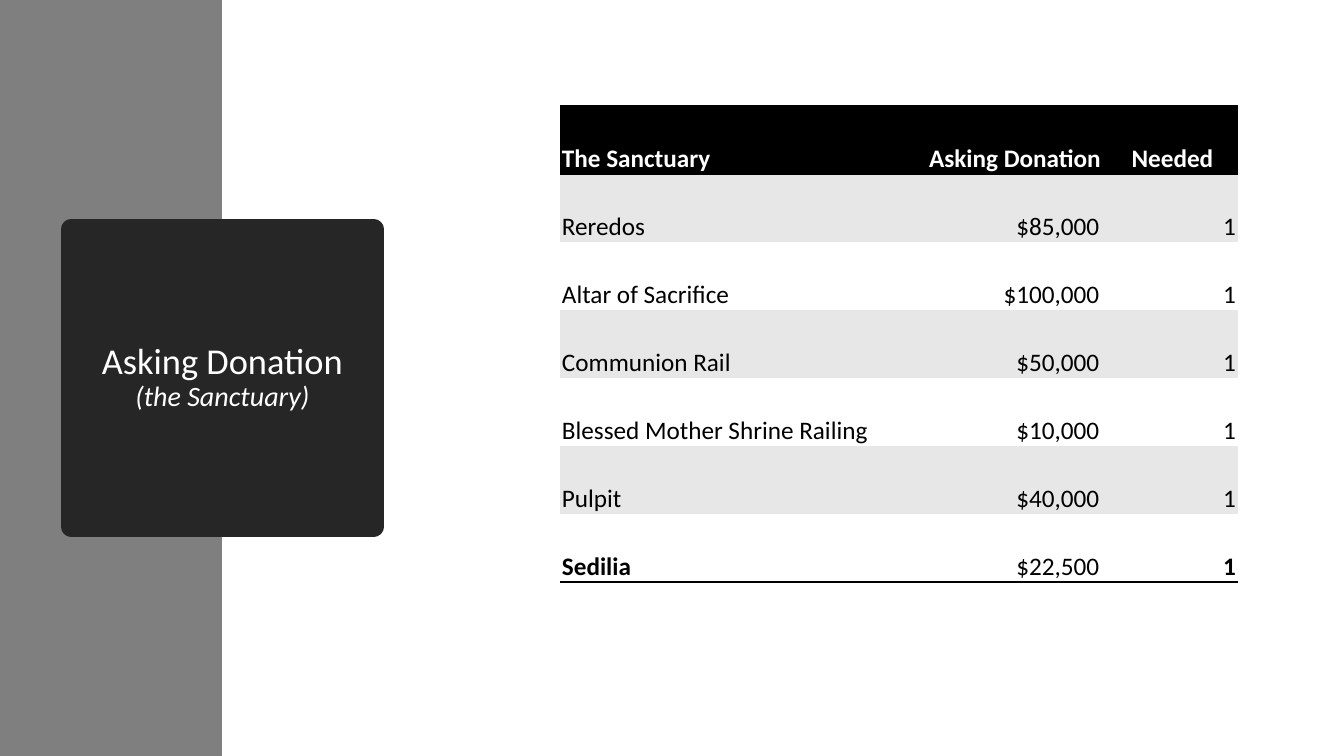
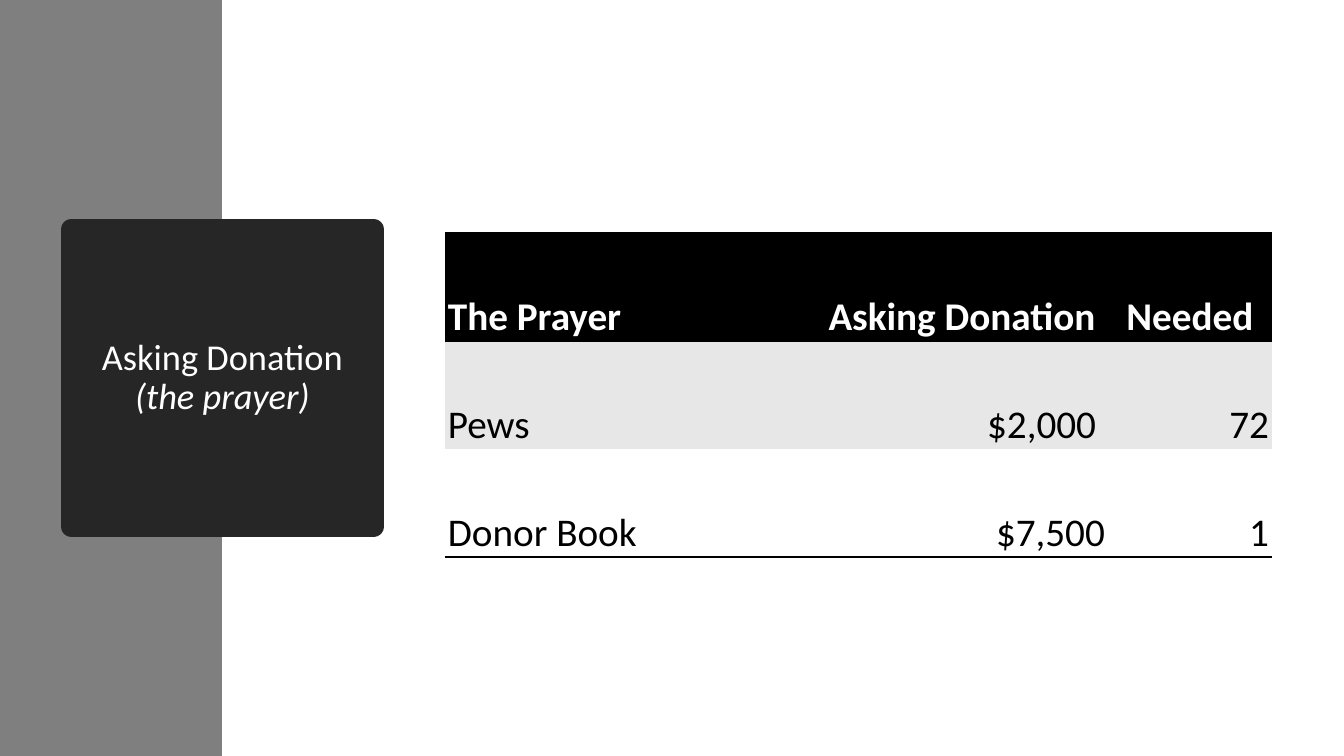
from lxml import etree
from pptx import Presentation
from pptx.dml.color import RGBColor
from pptx.enum.shapes import MSO_SHAPE
from pptx.enum.text import MSO_ANCHOR, MSO_AUTO_SIZE, PP_ALIGN
from pptx.oxml.ns import qn
from pptx.util import Emu, Pt

RECTANGLE = MSO_SHAPE.RECTANGLE
MIDDLE, BOTTOM = MSO_ANCHOR.MIDDLE, MSO_ANCHOR.BOTTOM
LEFT, CENTER, RIGHT = PP_ALIGN.LEFT, PP_ALIGN.CENTER, PP_ALIGN.RIGHT
NO_AUTOFIT = MSO_AUTO_SIZE.NONE

PX_PER_INCH = 100.8
SLIDE_WIDTH, SLIDE_HEIGHT = 1344, 756
FONT = "Calibri"
BLACK, WHITE = "000000", "FFFFFF"
BAND_GRAY, TITLE_DARK, ROW_GRAY = "7F7F7F", "262626", "E7E7E7"
TITLE_SIZE = 26
PLAIN_TABLE_STYLE = "{2D5ABB26-0587-4C30-8999-92F81FD0307C}"

SANCTUARY_ROWS = [
    ("The Sanctuary", "Asking Donation", "Needed"),
    ("Reredos", "$85,000 ", "1"),
    ("Altar of Sacrifice", "$100,000 ", "1"),
    ("Communion Rail", "$50,000 ", "1"),
    ("Blessed Mother Shrine Railing", "$10,000 ", "1"),
    ("Pulpit", "$40,000 ", "1"),
    ("Sedilia", "$22,500 ", "1"),
]
PRAYER_ROWS = [
    ("The Prayer", "Asking Donation", "Needed"),
    ("Pews", "$2,000 ", "72"),
    ("Donor Book", "$7,500", "1"),
]


def px(length):
    """Turn pixels into EMU."""
    return Emu(round(length * 914400 / PX_PER_INCH))


def color(value):
    """Turn a hex string into a colour."""
    return RGBColor.from_string(value)


def paint(fill, value):
    """Make a fill solid."""
    fill.solid()
    fill.fore_color.rgb = color(value)


def style_font(font, size, value, bold=False):
    """Set the deck font with its size, colour and weight."""
    font.name = FONT
    font.size = Pt(size)
    font.bold = bold
    font.color.rgb = color(value)


def add_backdrop(slide):
    """Paint the background and put the side band behind the rest."""
    paint(slide.background.fill, WHITE)
    band = slide.shapes.add_shape(RECTANGLE, 0, 0, px(222), px(SLIDE_HEIGHT))
    band.shadow.inherit = False
    paint(band.fill, BAND_GRAY)
    band.line.fill.background()
    slide.shapes._spTree.insert(2, band._element)


def set_title(slide, heading, subtitle, subtitle_size):
    """Format the title as a dark rounded tile with an italic second line."""
    title = slide.shapes.title
    title.left, title.top, title.width, title.height = map(px, (71, 229, 303, 298))
    paint(title.fill, TITLE_DARK)
    paint(title.line.fill, TITLE_DARK)
    title.line.width = Pt(13.75)
    etree.SubElement(title.line._get_or_add_ln(), qn("a:round"))
    frame = title.text_frame
    frame.auto_size = NO_AUTOFIT
    frame.word_wrap = True
    frame.vertical_anchor = MIDDLE
    paragraph = frame.paragraphs[0]
    paragraph.alignment = CENTER
    paragraph.line_spacing = 0.9
    style_font(paragraph.font, TITLE_SIZE, WHITE)
    paragraph.add_run().text = heading
    paragraph.add_line_break()
    run = paragraph.add_run()
    run.text = subtitle
    run.font.italic = True
    run.font.size = Pt(subtitle_size)


def add_border(cell, side):
    """Draw a black 2 pt line on one side of a cell."""
    line = etree.SubElement(cell._tc.get_or_add_tcPr(), qn(f"a:ln{side}"), w=str(Pt(2)))
    fill = etree.SubElement(line, qn("a:solidFill"))
    etree.SubElement(fill, qn("a:srgbClr"), val=BLACK)


def fill_cell(cell, text, alignment, size, text_color, bold, margin):
    """Write one bottom-anchored table cell."""
    cell.margin_left = cell.margin_right = cell.margin_top = px(margin)
    cell.margin_bottom = 0
    cell.vertical_anchor = BOTTOM
    paragraph = cell.text_frame.paragraphs[0]
    paragraph.text = text
    paragraph.alignment = alignment
    style_font(paragraph.font, size, text_color, bold)


def add_donation_table(slide, rows, left, top, widths, row_height, size, margin, bold_cells=()):
    """Add a table with a black header, banded rows and a closing rule."""
    frame = slide.shapes.add_table(len(rows), len(widths), px(left), px(top),
                                   px(sum(widths)), px(row_height * len(rows)))
    table = frame.table
    table._tbl.tblPr.find(qn("a:tableStyleId")).text = PLAIN_TABLE_STYLE
    for column, width in zip(table.columns, widths):
        column.width = px(width)
    for row_index, texts in enumerate(rows):
        table.rows[row_index].height = px(row_height)
        header = row_index == 0
        sides = "TB" if header else "B" if row_index == len(rows) - 1 else ""
        background = BLACK if header else ROW_GRAY if row_index % 2 else WHITE
        for column_index, text in enumerate(texts):
            cell = table.cell(row_index, column_index)
            alignment = LEFT if column_index == 0 else CENTER if header else RIGHT
            bold = header or (row_index, column_index) in bold_cells
            fill_cell(cell, text, alignment, size, WHITE if header else BLACK, bold, margin)
            for side in sides:
                add_border(cell, side)
            paint(cell.fill, background)


def add_donation_slide(presentation, subtitle, subtitle_size):
    """Add a slide with the shared backdrop and title tile."""
    slide = presentation.slides.add_slide(presentation.slide_layouts[5])
    add_backdrop(slide)
    set_title(slide, "Asking Donation", subtitle, subtitle_size)
    return slide


def main():
    """Build and save the presentation."""
    presentation = Presentation()
    presentation.slide_width = px(SLIDE_WIDTH)
    presentation.slide_height = px(SLIDE_HEIGHT)
    sanctuary = add_donation_slide(presentation, "(the Sanctuary)", 20)
    add_donation_table(sanctuary, SANCTUARY_ROWS, 560, 106, (363, 184, 131), 68,
                       size=18, margin=2, bold_cells={(6, 0), (6, 2)})
    prayer = add_donation_slide(presentation, "(the prayer)", TITLE_SIZE)
    add_donation_table(prayer, PRAYER_ROWS, 445, 233, (371, 292, 164), 108,
                       size=28, margin=3)
    presentation.save("out.pptx")


if __name__ == "__main__":
    main()
